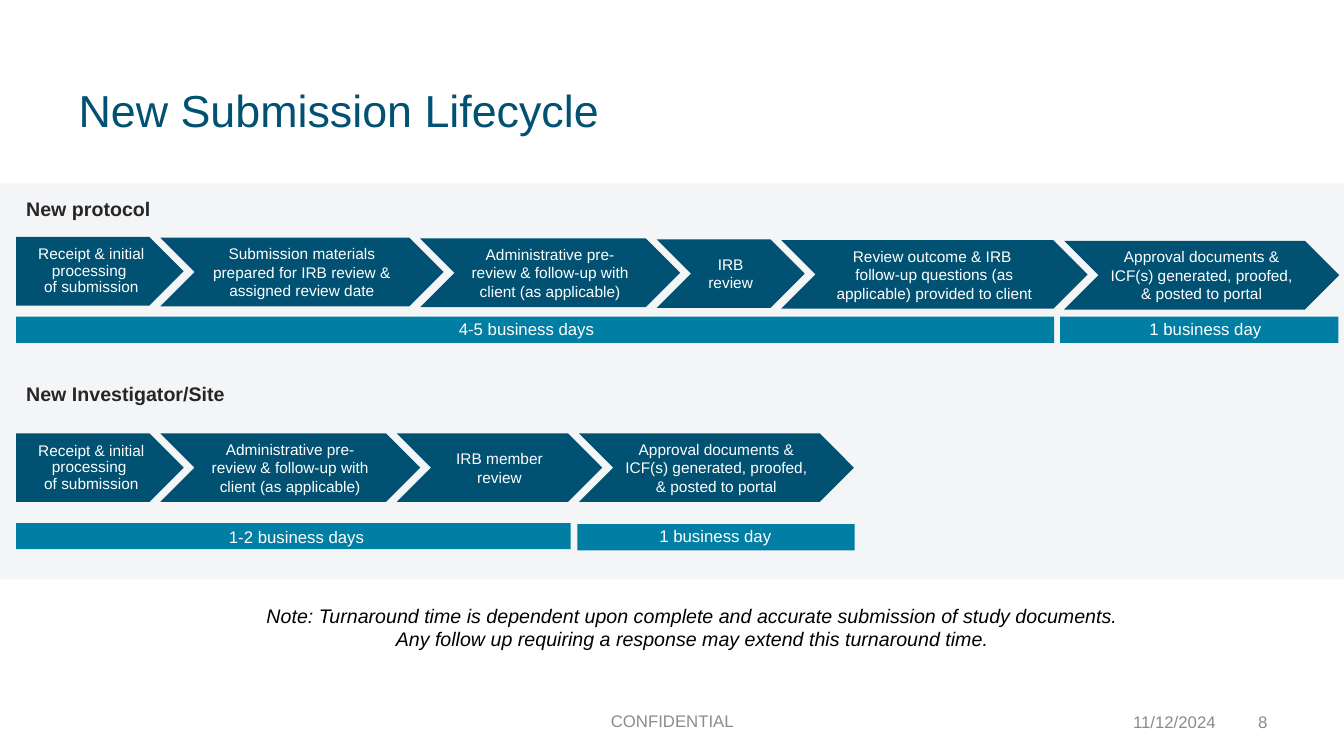
from pptx import Presentation
from pptx.dml.color import RGBColor
from pptx.enum.shapes import MSO_SHAPE
from pptx.enum.text import MSO_ANCHOR, MSO_AUTO_SIZE, PP_ALIGN
from pptx.oxml.ns import qn
from pptx.util import Cm, Pt
from lxml import etree

RECT, PENTAGON, CHEVRON = MSO_SHAPE.RECTANGLE, MSO_SHAPE.PENTAGON, MSO_SHAPE.CHEVRON
LEFT, CENTER, RIGHT = PP_ALIGN.LEFT, PP_ALIGN.CENTER, PP_ALIGN.RIGHT
TOP, MIDDLE = MSO_ANCHOR.TOP, MSO_ANCHOR.MIDDLE
GROW = MSO_AUTO_SIZE.SHAPE_TO_FIT_TEXT

FONT = "Arial"
COLORS = {"navy": "005172", "teal": "007EA3", "band": "C9D0D9", "white": "FFFFFF",
          "heading": "262626", "footer": "8C8C8C", "black": "000000"}

RECEIPT = ("Receipt & initial processing \nof submission", 4.22)
ADMIN = ("Administrative pre-review & follow-up with client (as applicable)", 6.55)
APPROVAL = ("Approval documents & ICF(s) generated, proofed, & posted to portal", 6.93)

LIFECYCLES = [
    {"heading": ("New protocol", (0.41, 4.85, 5.08, 0.86)),
     "top": 5.97, "drift": 0.02,
     "steps": [RECEIPT,
               ("Submission materials prepared for IRB review & assigned review date", 7.14),
               ADMIN,
               ("IRB review", 3.73),
               ("Review outcome & IRB \nfollow-up questions (as applicable) provided to client", 7.72),
               APPROVAL],
     "bars": [(0.41, 7.98, 26.16), (26.72, 7.98, 7.01)],
     "durations": [("4-5 business days", (0, 7.9, 26.54, 0.76)),
                   ("1 business day", (28.45, 7.9, 3.86, 0.76))]},
    {"heading": ("New Investigator/Site", (0.41, 9.5, 8.41, 0.86)),
     "top": 10.92, "drift": 0,
     "steps": [RECEIPT, ADMIN, ("IRB member review", 5.18), APPROVAL],
     "bars": [(0.41, 13.18, 13.97), (14.55, 13.21, 6.99)],
     "durations": [("1-2 business days", (0.58, 13.16, 13.79, 0.76)),
                   ("1 business day", (16.1, 13.13, 3.86, 0.76))]},
]
TITLE = ("New Submission Lifecycle", (1.73, 1.02, 30.45, 3.68))
NOTE = (["Note: Turnaround time is dependent upon complete and accurate submission of study documents.",
         "Any follow up requiring a response may extend this turnaround time."],
        (5.59, 15.09, 23.72, 1.45))
FOOTERS = [("CONFIDENTIAL", (11.23, 17.65, 11.43, 1.02), CENTER),
           ("11/12/2024", (26.39, 17.68, 4.5, 1.02), RIGHT),
           ("8", (30.89, 17.68, 1.3, 1.02), RIGHT)]
BAND = (0, 4.62, 33.87, 9.98)
STEP_LEFT, STEP_HEIGHT, STEP_OVERLAP, BAR_HEIGHT = 0.41, 1.73, 0.59, 0.66


def write(sp, lines, size, color, align=LEFT, anchor=TOP, spacing=None, bold=None, italic=None):
    tf = sp.text_frame
    tf.word_wrap = True
    tf.vertical_anchor = anchor
    for i, line in enumerate(lines):
        p = tf.add_paragraph() if i else tf.paragraphs[0]
        p.text = line
        p.alignment = align
        if spacing:
            p.line_spacing = spacing
        p.font.name, p.font.size = FONT, Pt(size)
        p.font.bold, p.font.italic = bold, italic
        p.font.color.rgb = RGBColor.from_string(COLORS[color])


def add_text(s, lines, box, size, color, grow=False, **style):
    sp = s.shapes.add_textbox(*map(Cm, box))
    write(sp, lines, size, color, **style)
    if grow:
        sp.text_frame.auto_size = GROW


def add_block(s, kind, box, color):
    sp = s.shapes.add_shape(kind, *map(Cm, box))
    sp.shadow.inherit = False
    sp.fill.solid()
    sp.fill.fore_color.rgb = RGBColor.from_string(COLORS[color])
    sp.line.fill.background()
    return sp


def add_lifecycle(s, cycle):
    heading, box = cycle["heading"]
    add_text(s, [heading], box, 14, "heading", grow=True, bold=True)
    left = STEP_LEFT
    for i, (label, width) in enumerate(cycle["steps"]):
        top = cycle["top"] + i * cycle["drift"]
        sp = add_block(s, CHEVRON if i else PENTAGON, (left, top, width, STEP_HEIGHT), "navy")
        write(sp, [label], 11, "white", align=CENTER, anchor=MIDDLE, spacing=None if i else 0.9)
        left += width - STEP_OVERLAP
    for bar in cycle["bars"]:
        add_block(s, RECT, (*bar, BAR_HEIGHT), "teal")
    for duration, box in cycle["durations"]:
        add_text(s, [duration], box, 12, "white", grow=True, align=CENTER)


def main():
    """Build the submission lifecycle slide."""
    prs = Presentation()
    prs.slide_width, prs.slide_height = Cm(33.87), Cm(19.05)
    s = prs.slides.add_slide(prs.slide_layouts[6])

    band = add_block(s, RECT, BAND, "band")
    rgb = band.fill._xPr.find(qn("a:solidFill"))[0]
    etree.SubElement(rgb, qn("a:alpha"), val="20000")

    title, box = TITLE
    add_text(s, [title], box, 32, "navy", anchor=MIDDLE, spacing=0.9)
    for cycle in LIFECYCLES:
        add_lifecycle(s, cycle)
    lines, box = NOTE
    add_text(s, lines, box, 14, "black", grow=True, align=CENTER, italic=True)
    for text, box, align in FOOTERS:
        add_text(s, [text], box, 12, "footer", align=align, anchor=MIDDLE)
    prs.save("out.pptx")


if __name__ == "__main__":
    main()
